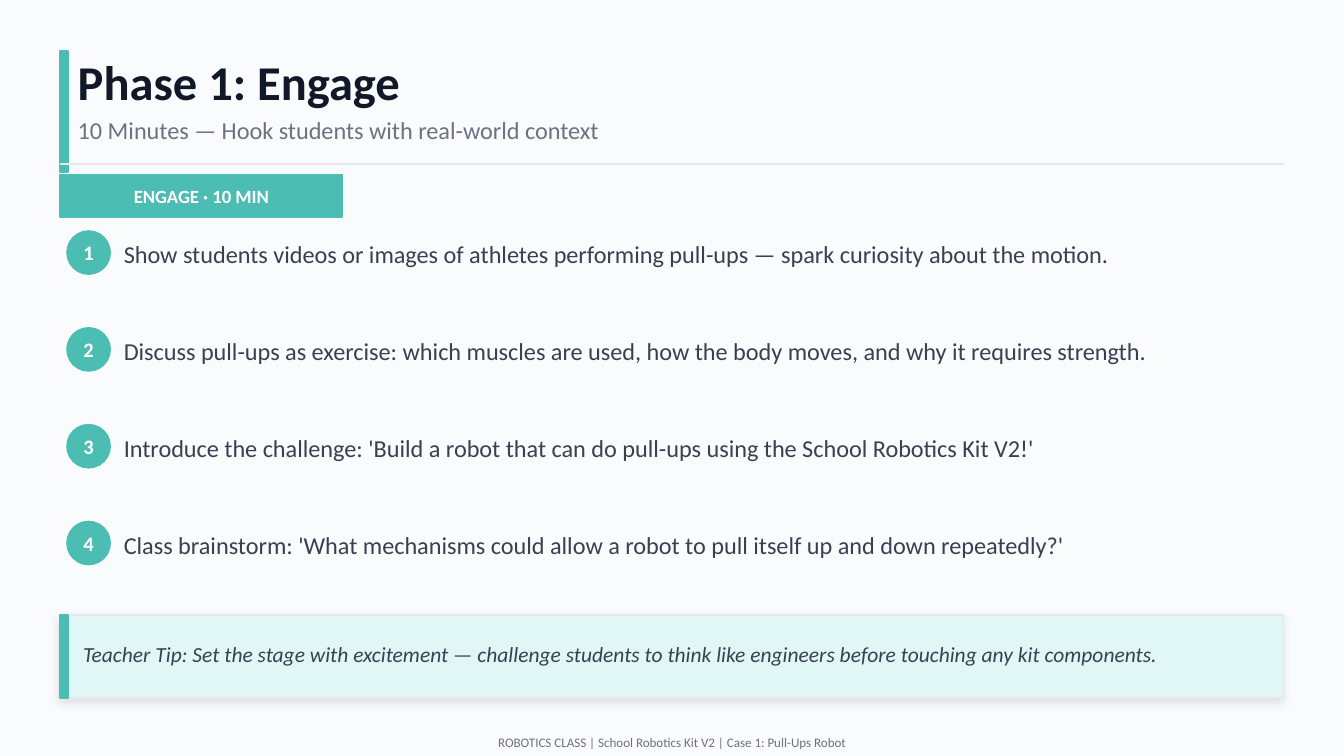
from lxml import etree
from pptx import Presentation
from pptx import util as u
from pptx.dml.color import RGBColor
from pptx.enum import shapes, text
from pptx.oxml import ns

BACKGROUND = RGBColor(0xFA, 0xFB, 0xFC)
TEAL = RGBColor(0x4B, 0xBD, 0xB3)
PALE_TEAL = RGBColor(0xE0, 0xF7, 0xF5)
RULE_GRAY = RGBColor(0xE5, 0xE7, 0xEB)
INK = RGBColor(0x11, 0x18, 0x27)
BODY = RGBColor(0x37, 0x41, 0x51)
MUTED = RGBColor(0x6B, 0x72, 0x80)
WHITE = RGBColor(0xFF, 0xFF, 0xFF)

FONT = "Calibri"
SLIDE_WIDTH = 25.4
MARGIN = 1.14
CONTENT_WIDTH = SLIDE_WIDTH - 2 * MARGIN
BAR_WIDTH = 0.15
STEP_TOP = 4.37
STEP_PITCH = 1.83
CIRCLE_SIZE = 0.81
TIP_TOP = 11.63
TIP_HEIGHT = 1.57

STEPS = [
    "Show students videos or images of athletes performing pull-ups — spark curiosity about the motion.",
    "Discuss pull-ups as exercise: which muscles are used, how the body moves, and why it requires strength.",
    "Introduce the challenge: 'Build a robot that can do pull-ups using the School Robotics Kit V2!'",
    "Class brainstorm: 'What mechanisms could allow a robot to pull itself up and down repeatedly?'",
]


def write(shape, content, size, color, bold=False, italic=False, centered=False):
    frame = shape.text_frame
    frame.word_wrap = True
    frame.vertical_anchor = text.MSO_ANCHOR.MIDDLE
    frame.margin_left = frame.margin_right = 0
    frame.margin_top = frame.margin_bottom = 0
    frame.text = content
    paragraph = frame.paragraphs[0]
    paragraph.alignment = text.PP_ALIGN.CENTER if centered else text.PP_ALIGN.LEFT
    font = paragraph.runs[0].font
    font.name = FONT
    font.size = u.Pt(size)
    font.bold = bold
    font.italic = italic
    font.color.rgb = color


def add_label(slide, left, top, width, height, content, size, color, **style):
    box = slide.shapes.add_textbox(u.Cm(left), u.Cm(top), u.Cm(width), u.Cm(height))
    write(box, content, size, color, **style)


def add_block(slide, left, top, width, height, fill=TEAL, line=TEAL,
              kind=shapes.MSO_SHAPE.RECTANGLE):
    shape = slide.shapes.add_shape(kind, u.Cm(left), u.Cm(top), u.Cm(width), u.Cm(height))
    shape.shadow.inherit = False
    shape.fill.solid()
    shape.fill.fore_color.rgb = fill
    shape.line.color.rgb = line
    shape.line.width = u.Pt(1)
    return shape


def add_soft_shadow(shape):
    effects = shape._element.spPr.find(ns.qn("a:effectLst"))
    shadow = etree.SubElement(effects, ns.qn("a:outerShdw"), blurRad=str(u.Pt(5)),
                              dist=str(u.Pt(2)), dir=str(135 * 60000),
                              algn="bl", rotWithShape="0")
    color = etree.SubElement(shadow, ns.qn("a:srgbClr"), val="000000")
    etree.SubElement(color, ns.qn("a:alpha"), val="10000")


def add_rule(slide, top):
    rule = slide.shapes.add_connector(
        shapes.MSO_CONNECTOR.STRAIGHT, u.Cm(MARGIN), u.Cm(top),
        u.Cm(MARGIN + CONTENT_WIDTH), u.Cm(top))
    rule.line.color.rgb = RULE_GRAY
    rule.line.width = u.Pt(1)
    etree.SubElement(rule._element.spPr, ns.qn("a:effectLst"))


def add_header(slide):
    add_block(slide, MARGIN, 0.97, BAR_WIDTH, 2.29)
    add_label(slide, 1.47, 0.89, 21.59, 1.27, "Phase 1: Engage", 26, INK, bold=True)
    add_label(slide, 1.47, 2.08, 21.59, 0.76,
              "10 Minutes — Hook students with real-world context", 13, MUTED)
    add_rule(slide, 3.1)
    badge = add_block(slide, MARGIN, 3.3, 5.33, 0.81)
    write(badge, "ENGAGE · 10 MIN", 10, WHITE, bold=True, centered=True)


def add_step(slide, number, content):
    top = STEP_TOP + (number - 1) * STEP_PITCH
    circle = add_block(slide, 1.27, top, CIRCLE_SIZE, CIRCLE_SIZE,
                       kind=shapes.MSO_SHAPE.OVAL)
    write(circle, str(number), 11, WHITE, bold=True, centered=True)
    add_label(slide, 2.34, top - 0.05, 21.59, 0.97, content, 13, BODY)


def add_tip(slide, content):
    panel = add_block(slide, MARGIN, TIP_TOP, CONTENT_WIDTH, TIP_HEIGHT,
                      fill=PALE_TEAL, line=RULE_GRAY)
    add_soft_shadow(panel)
    add_block(slide, MARGIN, TIP_TOP, BAR_WIDTH, TIP_HEIGHT)
    add_label(slide, 1.57, TIP_TOP + 0.1, 22.35, 1.27, content, 11.5, BODY, italic=True)


def main():
    presentation = Presentation()
    presentation.slide_width = u.Cm(SLIDE_WIDTH)
    presentation.slide_height = u.Cm(14.29)
    slide = presentation.slides.add_slide(presentation.slide_layouts[6])
    slide.background.fill.solid()
    slide.background.fill.fore_color.rgb = BACKGROUND

    add_header(slide)
    for number, content in enumerate(STEPS, start=1):
        add_step(slide, number, content)
    add_tip(slide, "Teacher Tip: Set the stage with excitement — challenge students "
                   "to think like engineers before touching any kit components.")
    add_label(slide, 0, 13.77, SLIDE_WIDTH, 0.51,
              "ROBOTICS CLASS | School Robotics Kit V2 | Case 1: Pull-Ups Robot",
              7, MUTED, centered=True)
    presentation.save("out.pptx")


if __name__ == "__main__":
    main()
